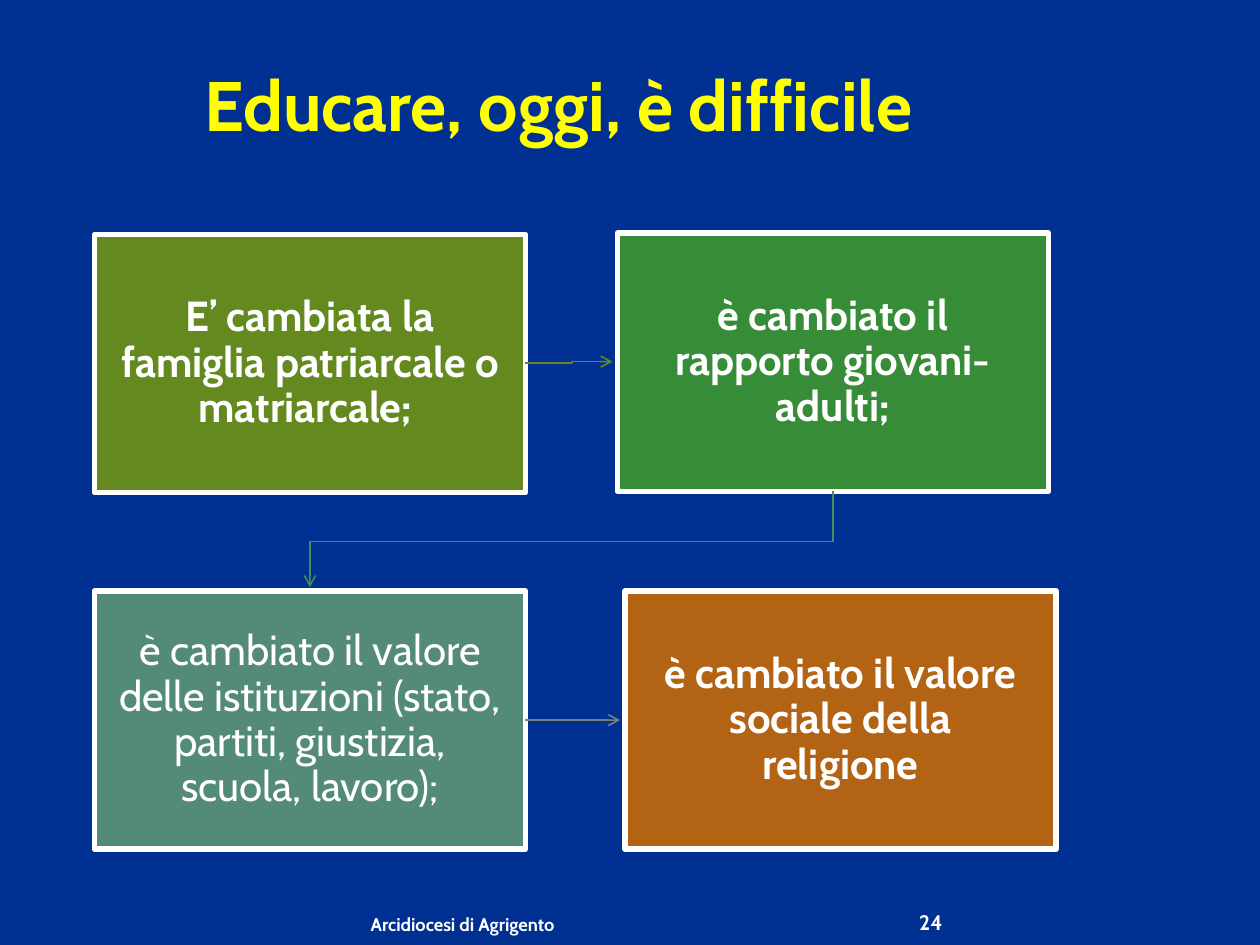
from lxml import etree
from pptx import Presentation
from pptx.dml.color import RGBColor
from pptx.enum.shapes import MSO_CONNECTOR, MSO_SHAPE
from pptx.enum.text import MSO_ANCHOR, PP_ALIGN
from pptx.oxml.ns import qn
from pptx.util import Inches, Pt

CENTER, RIGHT = PP_ALIGN.CENTER, PP_ALIGN.RIGHT
TOP, MIDDLE, BOTTOM = MSO_ANCHOR.TOP, MSO_ANCHOR.MIDDLE, MSO_ANCHOR.BOTTOM
RECTANGLE, STRAIGHT = MSO_SHAPE.RECTANGLE, MSO_CONNECTOR.STRAIGHT
COLUMNS, ROWS = 100, 75
WHITE, YELLOW, BLUE = "FFFFFF", "FFFF00", "003192"


def color(value):
    return RGBColor.from_string(value)


def write(shape, text, size=24, ink=WHITE, bold=True, align=CENTER,
          anchor=MIDDLE, insets=(0.1, 0.05), spacing=None, font="Cabin"):
    frame = shape.text_frame
    frame.word_wrap = True
    frame.vertical_anchor = anchor
    frame.margin_left = frame.margin_right = Inches(insets[0])
    frame.margin_top = frame.margin_bottom = Inches(insets[1])
    para = frame.paragraphs[0]
    para.alignment = align
    if spacing:
        para.line_spacing = spacing
    span = para.add_run()
    span.text = text
    span.font.name = font
    span.font.size = Pt(size)
    span.font.bold = bold
    span.font.color.rgb = color(ink)


class Page:
    border_width = 3.15
    arrow_width = 0.9

    def __init__(self, deck, background):
        self.width, self.height = deck.slide_width, deck.slide_height
        self.slide = deck.slides.add_slide(deck.slide_layouts[6])
        self.shapes = self.slide.shapes
        fill = self.slide.background.fill
        fill.solid()
        fill.fore_color.rgb = color(background)

    def across(self, columns):
        return round(self.width * columns / COLUMNS)

    def down(self, rows):
        return round(self.height * rows / ROWS)

    def area(self, left, top, width, height):
        return (self.across(left), self.down(top),
                self.across(width), self.down(height))

    def label(self, text, *area, **style):
        write(self.shapes.add_textbox(*self.area(*area)), text, **style)

    def card(self, text, *area, fill, bold=True):
        box = self.shapes.add_shape(RECTANGLE, *self.area(*area))
        box.shadow.inherit = False
        box.fill.solid()
        box.fill.fore_color.rgb = color(fill)
        box.line.color.rgb = color(WHITE)
        box.line.width = Pt(self.border_width)
        write(box, text, bold=bold, insets=(0.19, 0.19), spacing=0.9)
        return box

    def finish_arrow(self, arrow, ink):
        arrow.line.color.rgb = color(ink)
        arrow.line.width = Pt(self.arrow_width)
        etree.SubElement(arrow.line._get_or_add_ln(), qn("a:tailEnd"), type="arrow")

    def bent_arrow(self, ink, *points):
        start, *rest = [(self.across(x), self.down(y)) for x, y in points]
        builder = self.shapes.build_freeform(*start)
        builder.add_line_segments(rest, close=False)
        arrow = builder.convert_to_shape()
        arrow.shadow.inherit = False
        arrow.fill.background()
        self.finish_arrow(arrow, ink)

    def straight_arrow(self, ink, source, end_column):
        middle = source.top + source.height // 2
        arrow = self.shapes.add_connector(
            STRAIGHT, source.left + source.width, middle,
            self.across(end_column), middle)
        arrow.begin_connect(source, 3)
        etree.SubElement(arrow._element.spPr, qn("a:effectLst"))
        self.finish_arrow(arrow, ink)


def main():
    deck = Presentation()
    deck.slide_width, deck.slide_height = Inches(10), Inches(7.5)
    page = Page(deck, BLUE)
    page.label("Educare, oggi, è difficile", 0, 4.4, 88.6, 7.7,
               size=40, ink=YELLOW, anchor=TOP)

    card_size = (34.2, 20.5)
    page.card("E’ cambiata la famiglia patriarcale o matriarcale; ",
              7.5, 18.6, *card_size, fill="63891F")
    page.card("è cambiato il rapporto giovani-adulti;",
              49, 18.5, *card_size, fill="378D37")
    institutions = page.card(
        "è cambiato il valore delle istituzioni (stato, partiti, giustizia, "
        "scuola, lavoro);", 7.5, 46.9, *card_size, fill="538B78", bold=False)
    page.card("è cambiato il valore sociale della religione",
              49.6, 46.9, *card_size, fill="B26314")

    page.bent_arrow("63891F", (41.7, 28.8), (45.4, 28.8), (45.4, 28.7), (48.6, 28.7))
    page.bent_arrow("448D5D", (66.1, 39), (66.1, 43), (24.6, 43), (24.6, 46.6))
    page.straight_arrow("758085", institutions, 49.2)

    page.label("24", 68.4, 71.7, 6.4, 2.5, size=12, align=RIGHT,
               anchor=BOTTOM, insets=(0, 0))
    page.label("Arcidiocesi di Agrigento", 5, 71.7, 40, 2.5, size=10.5,
               align=RIGHT, anchor=BOTTOM, insets=(0.1, 0))
    deck.save("out.pptx")


if __name__ == "__main__":
    main()
